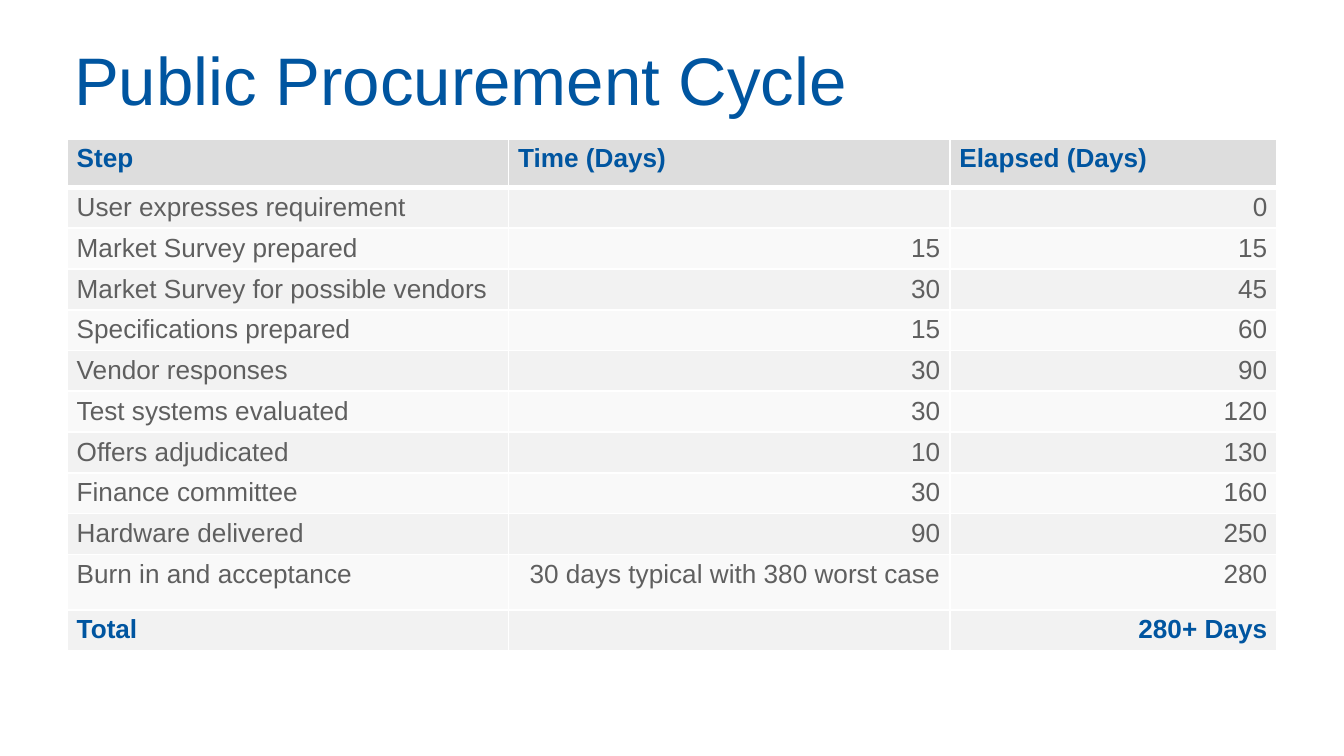
from lxml.etree import SubElement
from pptx import Presentation
from pptx.dml.color import RGBColor
from pptx.enum.text import MSO_ANCHOR as Anchor, PP_ALIGN as Align
from pptx.oxml.ns import qn
from pptx.util import Cm, Pt

BLUE, GREY, WHITE = "0055A0", "5F5F5F", "FFFFFF"
HEADER_FILL, BAND_FILLS = "DDDDDD", ("F9F9F9", "F2F2F2")
LEFT, WIDTH = Cm(1.27), Cm(22.86)
COLUMN_WIDTHS = (8.34, 8.34, 6.18)
HEADER_HEIGHT, STEP_HEIGHT, ACCEPTANCE_HEIGHT = 0.92, 0.77, 1.05

STEPS = [
    ("Step", "Time (Days)", "Elapsed (Days)"),
    ("User expresses requirement", "", "0"),
    ("Market Survey prepared", "15", "15"),
    ("Market Survey for possible vendors", "30", "45"),
    ("Specifications prepared", "15", "60"),
    ("Vendor responses", "30", "90"),
    ("Test systems evaluated", "30", "120"),
    ("Offers adjudicated", "10", "130"),
    ("Finance committee", "30", "160"),
    ("Hardware delivered", "90", "250"),
    ("Burn in and acceptance", "30 days typical with 380 worst case", "280"),
    ("Total", "", "280+ Days"),
]
TOTAL = len(STEPS) - 1


def rgb(value):
    """Turn a hex string into a colour."""
    return RGBColor.from_string(value)


def style_paragraph(paragraph, size, color, bold=False, align=Align.LEFT):
    """Set the alignment and font of a paragraph."""
    paragraph.alignment = align
    font = paragraph.font
    font.name, font.size, font.bold = "Arial", Pt(size), bold
    font.color.rgb = rgb(color)


def add_title(slide, text):
    """Place and format the slide title."""
    title = slide.shapes.title
    title.left, title.top, title.width, title.height = LEFT, Cm(0.51), WIDTH, Cm(1.96)
    frame = title.text_frame
    frame.text = text
    frame.vertical_anchor = Anchor.MIDDLE
    frame.margin_left = frame.margin_right = Cm(0.13)
    frame.margin_top = frame.margin_bottom = Cm(0.13)
    style_paragraph(frame.paragraphs[0], 36, BLUE)


def add_borders(cell, top, bottom):
    """Draw white borders, with top and bottom widths in points."""
    properties = cell._tc.get_or_add_tcPr()
    for side, width in (("L", 1), ("R", 1), ("T", top), ("B", bottom)):
        border = SubElement(properties, qn(f"a:ln{side}"), w=str(Pt(width)))
        fill = SubElement(border, qn("a:solidFill"))
        SubElement(fill, qn("a:srgbClr"), val=WHITE)


def fill_cell(cell, text, row, column):
    """Write one cell and style it by its place in the table."""
    is_header = row == 0
    strong = row in (0, TOTAL)
    cell.margin_left = cell.margin_right = Cm(0.18)
    cell.margin_top = cell.margin_bottom = Cm(0.1)
    add_borders(cell, 3 if row == 1 else 1, 3 if is_header else 1)
    cell.fill.solid()
    cell.fill.fore_color.rgb = rgb(HEADER_FILL if is_header else BAND_FILLS[row % 2])
    cell.text = text
    paragraph = cell.text_frame.paragraphs[0]
    align = Align.RIGHT if column and not is_header else Align.LEFT
    style_paragraph(paragraph, 14, BLUE if strong else GREY, strong, align)
    if not text:
        SubElement(paragraph._p, qn("a:endParaRPr"), sz="1400")


def add_cycle_table(slide):
    """Add the table of procurement steps."""
    heights = [STEP_HEIGHT] * len(STEPS)
    heights[0], heights[TOTAL - 1] = HEADER_HEIGHT, ACCEPTANCE_HEIGHT
    table = slide.shapes.add_table(
        len(STEPS), len(COLUMN_WIDTHS), LEFT, Cm(2.62), WIDTH, Cm(sum(heights))
    ).table
    table.first_row = table.horz_banding = False
    for column, width in zip(table.columns, COLUMN_WIDTHS):
        column.width = Cm(width)
    for row, (step, height) in enumerate(zip(STEPS, heights)):
        table.rows[row].height = Cm(height)
        for column, text in enumerate(step):
            fill_cell(table.cell(row, column), text, row, column)


def main():
    """Build and save the slide."""
    presentation = Presentation()
    presentation.slide_width, presentation.slide_height = Cm(25.4), Cm(14.28)
    slide = presentation.slides.add_slide(presentation.slide_layouts[5])
    add_title(slide, "Public Procurement Cycle")
    add_cycle_table(slide)
    presentation.save("out.pptx")


if __name__ == "__main__":
    main()
